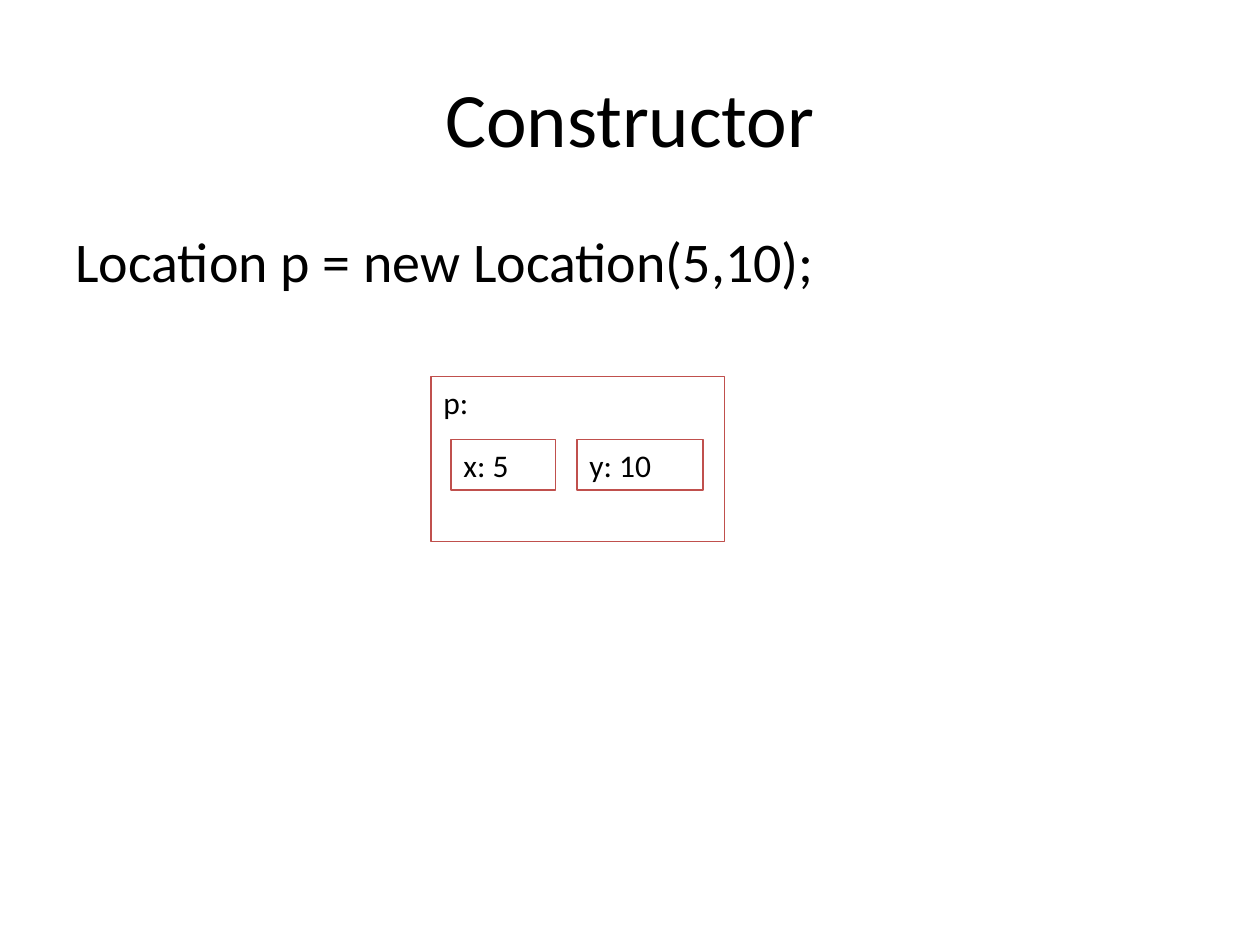
from pptx import Presentation
from pptx.dml.color import RGBColor
from pptx.enum.shapes import MSO_SHAPE
from pptx.enum.text import MSO_ANCHOR, PP_ALIGN
from pptx.util import Inches, Pt

RECTANGLE = MSO_SHAPE.RECTANGLE
TOP, MIDDLE = MSO_ANCHOR.TOP, MSO_ANCHOR.MIDDLE
LEFT, CENTER = PP_ALIGN.LEFT, PP_ALIGN.CENTER

THEME = {
    "font": "Calibri",
    "text": RGBColor(0x00, 0x00, 0x00),
    "outline": RGBColor(0xC0, 0x50, 0x4D),
    "outline_width": Pt(0.75),
    "title_size": Pt(44),
    "code_size": Pt(32),
    "label_size": Pt(18),
}


def write(shape, text, size, align=LEFT, anchor=TOP):
    frame = shape.text_frame
    frame.word_wrap = True
    frame.vertical_anchor = anchor
    para = frame.paragraphs[0]
    para.alignment = align
    span = para.add_run()
    span.text = text
    for name, value in {"name": THEME["font"], "size": size}.items():
        setattr(span.font, name, value)
    span.font.color.rgb = THEME["text"]


deck = Presentation()
deck.slide_width, deck.slide_height = Inches(10), Inches(7.5)
page = deck.slides.add_slide(deck.slide_layouts[5])

title = page.shapes.title
title_place = {"left": 0.5, "top": 0.3, "width": 9, "height": 1.25}
for name, value in title_place.items():
    setattr(title, name, Inches(value))
write(title, "Constructor", THEME["title_size"], CENTER, MIDDLE)

code = page.shapes.add_textbox(Inches(0.5), Inches(1.75), Inches(9), Inches(4.95))
write(code, "Location p = new Location(5,10);", THEME["code_size"])

# The object p, then the fields it holds
field_top, field_height = 3.49, 0.4
memory_boxes = [
    ("p:", 3.42, 2.99, 2.33, 1.31),
    ("x: 5", 3.58, field_top, 0.83, field_height),
    ("y: 10", 4.58, field_top, 1, field_height),
]
for label, *place in memory_boxes:
    box = page.shapes.add_shape(RECTANGLE, *map(Inches, place))
    box.shadow.inherit = False
    box.fill.background()
    box.line.color.rgb = THEME["outline"]
    box.line.width = THEME["outline_width"]
    write(box, label, THEME["label_size"])

deck.save("out.pptx")
